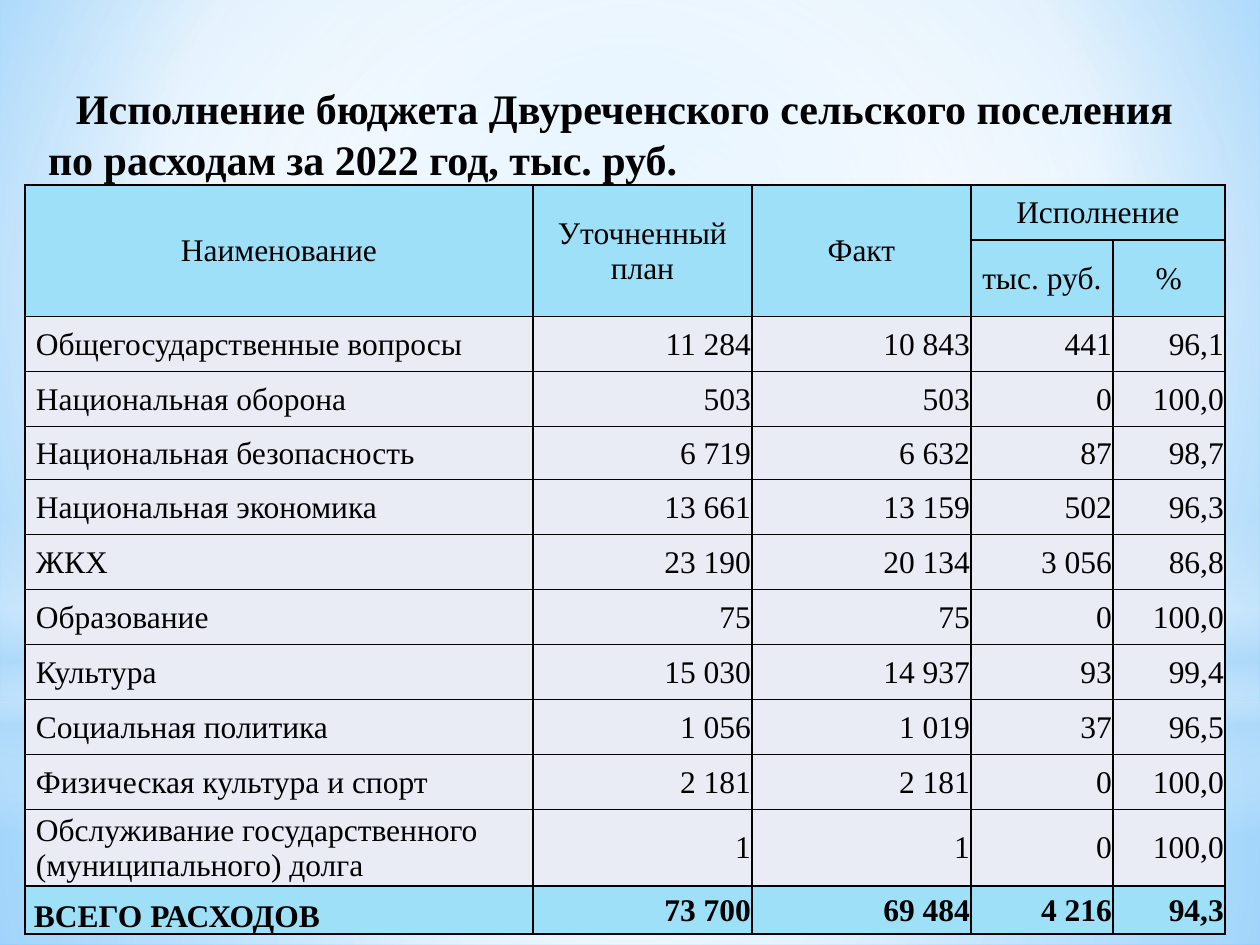
from lxml.etree import SubElement
from pptx import Presentation
from pptx.dml.color import RGBColor
from pptx.enum.shapes import MSO_SHAPE
from pptx.enum.text import MSO_ANCHOR, PP_ALIGN
from pptx.oxml import parse_xml
from pptx.oxml.ns import nsdecls, qn
from pptx.util import Pt

PX = 914400 // 126
FONT = "Times New Roman"
BLACK, HEADER_BLUE, ROW_GREY = "000000", "9EE0F8", "E9EBF5"
WHITE, PALE_BLUE = "FFFFFF", "B4DCFA"

COLUMN_WIDTHS = [508, 219, 219, 142, 112]
ROW_HEIGHTS = [55, 71, 55, 55, 53] + [55] * 6 + [71, 48]
EXPENSES = [
    ("Общегосударственные вопросы", "11 284", "10 843", "441", "96,1"),
    ("Национальная оборона", "503", "503", "0", "100,0"),
    ("Национальная безопасность", "6 719", "6 632", "87", "98,7"),
    ("Национальная экономика", "13 661", "13 159", "502", "96,3"),
    ("ЖКХ", "23 190", "20 134", "3 056", "86,8"),
    ("Образование", "75", "75", "0", "100,0"),
    ("Культура", "15 030", "14 937", "93", "99,4"),
    ("Социальная политика", "1 056", "1 019", "37", "96,5"),
    ("Физическая культура и спорт", "2 181", "2 181", "0", "100,0"),
    ("Обслуживание государственного (муниципального) долга", "1", "1", "0", "100,0"),
    ("ВСЕГО РАСХОДОВ", "73 700", "69 484", "4 216", "94,3"),
]


def px(length):
    return length * PX


def color(value):
    return RGBColor.from_string(value)


def add_run(paragraph, text, size, bold=False):
    run = paragraph.add_run()
    run.text = text
    run.font.name = FONT
    run.font.size = Pt(size)
    run.font.bold = bold
    run.font.color.rgb = color(BLACK)


def set_gradient(parent, stops, center=None):
    """Swap the solid fill for a gradient: circular around center, else vertical."""
    stop_list = "".join(
        f'<a:gs pos="{position * 1000}"><a:srgbClr val="{value}">'
        f'<a:alpha val="{alpha * 1000}"/></a:srgbClr></a:gs>'
        for position, value, alpha in stops)
    if center:
        sides = " ".join(f'{side}="{share * 1000}"' for side, share in zip("ltrb", center))
        direction = f'<a:path path="circle"><a:fillToRect {sides}/></a:path>'
    else:
        direction = '<a:lin ang="5400000" scaled="0"/>'
    gradient = parse_xml(
        f'<a:gradFill rotWithShape="1" {nsdecls("a")}>'
        f'<a:gsLst>{stop_list}</a:gsLst>{direction}</a:gradFill>')
    parent.replace(parent.find(qn("a:solidFill")), gradient)


def add_glow(slide, box, kind, stops, center=None):
    shape = slide.shapes.add_shape(kind, *map(px, box))
    shape.shadow.inherit = False
    shape.line.fill.background()
    shape.fill.solid()
    shape.fill.fore_color.rgb = color(WHITE)
    set_gradient(shape.element.spPr, stops, center)


def add_backdrop(slide, box):
    left, top, width, height = box
    middle = (50, 50, 50, 50)
    horizon = 703
    slide.background.fill.solid()
    slide.background.fill.fore_color.rgb = color(WHITE)
    set_gradient(next(slide.element.iter(qn("p:bgPr"))),
                 [(0, "9ED5FF", 100), (60, WHITE, 100), (100, "5BB9FF", 100)],
                 (20, 10, 20, 60))
    # Lower and upper halves
    add_glow(slide, (left, top + horizon, width, height - horizon), MSO_SHAPE.RECTANGLE,
             [(0, WHITE, 91), (37, WHITE, 76), (100, PALE_BLUE, 79)], middle)
    add_glow(slide, (left, top, width, horizon), MSO_SHAPE.RECTANGLE,
             [(0, WHITE, 89), (48, WHITE, 62), (100, PALE_BLUE, 79)], middle)
    # Horizon band and central light
    add_glow(slide, (left, top + 519, width, 315), MSO_SHAPE.RECTANGLE,
             [(0, WHITE, 0), (29, WHITE, 30), (45, PALE_BLUE, 40),
              (55, WHITE, 26), (65, PALE_BLUE, 60), (100, WHITE, 0)])
    add_glow(slide, (left, top + 220, width, horizon), MSO_SHAPE.OVAL,
             [(0, WHITE, 100), (56, WHITE, 0)], middle)


def add_title(slide, box):
    frame = slide.shapes.add_textbox(*map(px, box)).text_frame
    frame.word_wrap = True
    frame.margin_left, frame.margin_top = px(13), px(6)
    frame.margin_right = frame.margin_bottom = 0
    lines = ["Исполнение бюджета Двуреченского сельского поселения",
             "по расходам за 2022 год, тыс. руб."]
    for index, line in enumerate(lines):
        paragraph = frame.add_paragraph() if index else frame.paragraphs[0]
        paragraph.line_spacing = Pt(29)
        add_run(paragraph, line, 24, bold=True)
    frame.paragraphs[0]._p.get_or_add_pPr().set("indent", str(px(28)))


def style_cell(cell, fill):
    cell.fill.solid()
    cell.fill.fore_color.rgb = color(fill)
    cell.vertical_anchor = MSO_ANCHOR.MIDDLE
    cell.margin_left = cell.margin_right = cell.margin_top = px(1)
    cell.margin_bottom = 0
    properties = cell._tc.get_or_add_tcPr()
    for index, side in enumerate(("a:lnL", "a:lnR", "a:lnT", "a:lnB")):
        line = properties.makeelement(qn(side), {"w": str(Pt(1))})
        SubElement(SubElement(line, qn("a:solidFill")), qn("a:srgbClr"), val=BLACK)
        properties.insert(index, line)


def write_cell(cell, text, alignment, bold=False):
    paragraph = cell.text_frame.paragraphs[0]
    paragraph.alignment = alignment
    add_run(paragraph, text, 18, bold)


def add_budget_table(slide, box):
    table = slide.shapes.add_table(len(ROW_HEIGHTS), len(COLUMN_WIDTHS), *map(px, box)).table
    table.first_row = table.horz_banding = False
    for column, width in zip(table.columns, COLUMN_WIDTHS):
        column.width = px(width)
    last_row = len(ROW_HEIGHTS) - 1
    for index, (row, height) in enumerate(zip(table.rows, ROW_HEIGHTS)):
        row.height = px(height)
        for cell in row.cells:
            style_cell(cell, HEADER_BLUE if index in (0, 1, last_row) else ROW_GREY)

    # Two-level header
    for column in range(3):
        table.cell(0, column).merge(table.cell(1, column))
    table.cell(0, 3).merge(table.cell(0, 4))
    headers = {(0, 0): "Наименование", (0, 1): "Уточненный план", (0, 2): "Факт",
               (0, 3): "Исполнение", (1, 3): "тыс. руб.", (1, 4): "%"}
    for position, text in headers.items():
        write_cell(table.cell(*position), text, PP_ALIGN.CENTER)

    # Expenses and total
    for row, values in enumerate(EXPENSES, start=2):
        for column, text in enumerate(values):
            alignment = PP_ALIGN.RIGHT if column else PP_ALIGN.LEFT
            write_cell(table.cell(row, column), text, alignment, bold=row == last_row)
        table.cell(row, 0).margin_left = px(11)
    total = table.cell(last_row, 0)
    total.margin_left = px(9)
    total.vertical_anchor = MSO_ANCHOR.BOTTOM


def main():
    presentation = Presentation()
    presentation.slide_width, presentation.slide_height = px(1260), px(945)
    slide = presentation.slides.add_slide(presentation.slide_layouts[6])
    add_backdrop(slide, (0, 0, 1260, 945))
    add_title(slide, (35, 76, 1191, 108))
    add_budget_table(slide, (25, 185, sum(COLUMN_WIDTHS), sum(ROW_HEIGHTS)))
    presentation.save("out.pptx")


if __name__ == "__main__":
    main()
